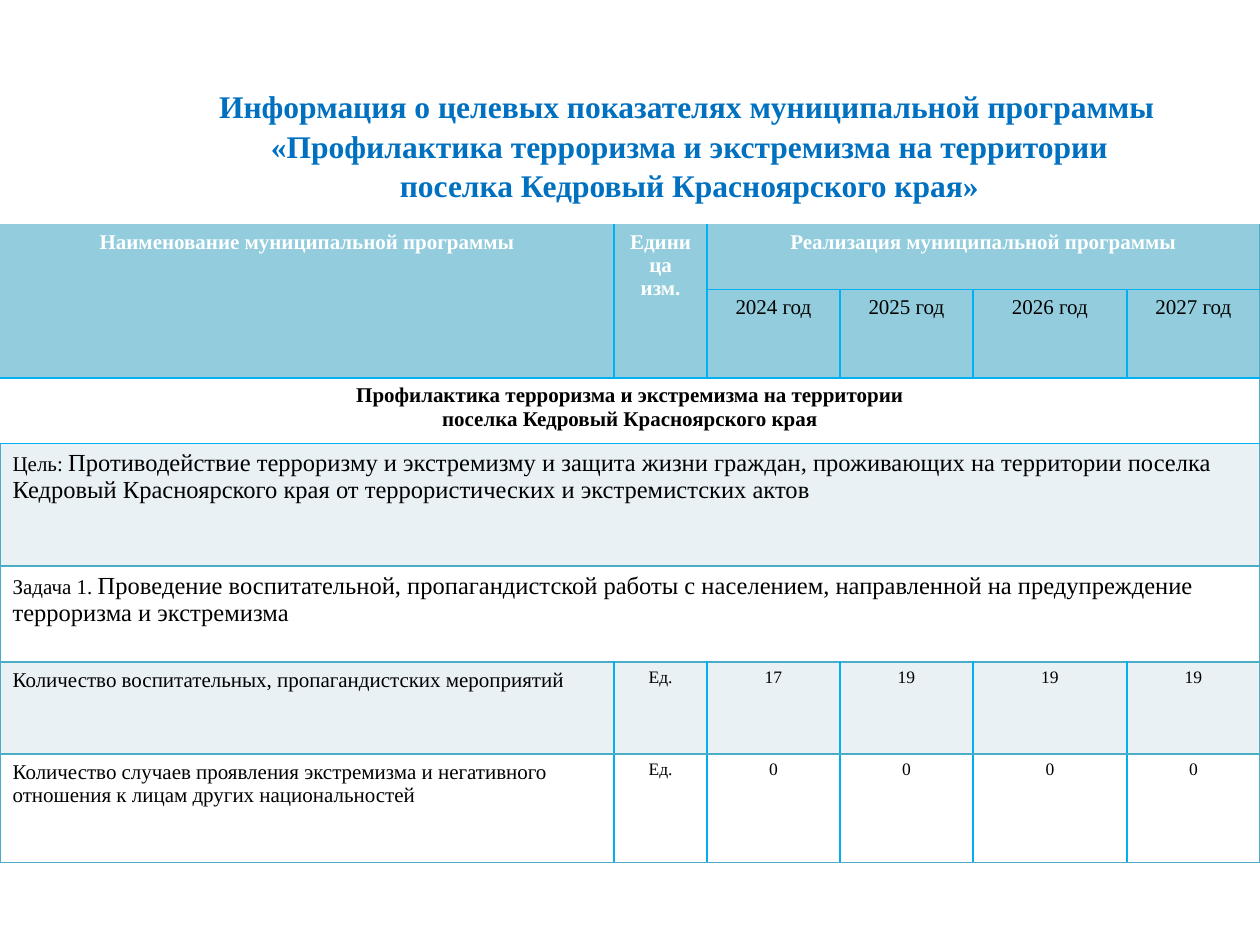
from lxml.etree import SubElement
from pptx import Presentation
from pptx.dml.color import RGBColor
from pptx.enum.text import MSO_ANCHOR as Anchor, MSO_AUTO_SIZE as AutoSize, PP_ALIGN as Align
from pptx.oxml.ns import qn
from pptx.util import Pt

BRIGHT, TEAL, BLUE = "00B0F0", "4BACC6", "0070C0"
HEADER, PALE, WHITE, BLACK = "93CDDD", "E9F1F5", "FFFFFF", "000000"

COLUMN_WIDTHS = [351, 53, 76, 76, 88, 76]
ROW_HEIGHTS = [37.5, 37.5, 37.5, 70, 55, 52.5, 62]
HEADER_ROWS = 3

TITLE = [
    ("Информация о целевых показателях муниципальной программы", Align.LEFT),
    ("«Профилактика терроризма и экстремизма на территории", Align.CENTER),
    ("поселка Кедровый Красноярского края»", Align.CENTER),
]
HEADINGS = [
    ("Наименование муниципальной программы", 0, 2, 1),
    ("Единица изм.", 1, 2, 1),
    ("Реализация муниципальной программы", 2, 1, 4),
]
YEARS = ["2024 год", "2025 год", "2026 год", "2027 год"]
PROGRAM = [
    "Профилактика терроризма и экстремизма на территории",
    "поселка Кедровый Красноярского края",
]
AIMS = [
    ("Цель: ", "Противодействие терроризму и экстремизму и защита жизни граждан, "
     "проживающих на территории поселка Кедровый Красноярского края "
     "от террористических и экстремистских актов", PALE),
    ("Задача 1. ", "Проведение воспитательной, пропагандистской работы с населением, "
     "направленной на предупреждение терроризма и экстремизма", WHITE),
]
INDICATORS = [
    ("Количество воспитательных, пропагандистских мероприятий",
     ["Ед.", "17", "19", "19", "19"], PALE),
    ("Количество случаев проявления экстремизма и негативного отношения "
     "к лицам других национальностей", ["Ед.", "0", "0", "0", "0"], WHITE),
]


def rgb(value):
    return RGBColor.from_string(value)


def add_text(paragraph, text, size=12, color=BLACK, bold=False, align=Align.LEFT):
    paragraph.alignment = align
    run = paragraph.add_run()
    run.text = text
    run.font.name = "Times New Roman"
    run.font.size = Pt(size)
    run.font.bold = bold
    run.font.color.rgb = rgb(color)


def next_paragraph(frame, index):
    return frame.add_paragraph() if index else frame.paragraphs[0]


class SlideBuilder:
    def __init__(self, presentation):
        self.slide = presentation.slides.add_slide(presentation.slide_layouts[5])
        self.table = None

    def title(self, lines, left, top, width, height):
        shape = self.slide.shapes.title
        shape.left, shape.top, shape.width, shape.height = map(Pt, (left, top, width, height))
        frame = shape.text_frame
        frame.word_wrap = True
        frame.auto_size = AutoSize.SHAPE_TO_FIT_TEXT
        frame.vertical_anchor = Anchor.TOP
        for index, (line, align) in enumerate(lines):
            paragraph = next_paragraph(frame, index)
            paragraph.line_spacing = 1.05
            paragraph.space_before = Pt(0)
            add_text(paragraph, line, size=18, color=BLUE, bold=True, align=align)

    def add_table(self, left, top, widths, heights):
        frame = self.slide.shapes.add_table(
            len(heights), len(widths), Pt(left), Pt(top), Pt(sum(widths)), Pt(sum(heights)))
        self.table = frame.table
        for column, width in zip(self.table.columns, widths):
            column.width = Pt(width)
        for row, height in zip(self.table.rows, heights):
            row.height = Pt(height)

    def cell(self, row, column, lines, fill, rows=1, columns=1, **text_format):
        cell = self.table.cell(row, column)
        bottom, right = row + rows, column + columns
        if rows * columns > 1:
            cell.merge(self.table.cell(bottom - 1, right - 1))
        self.borders(cell, row, column, bottom, right)
        cell.fill.solid()
        cell.fill.fore_color.rgb = rgb(fill)
        for index, line in enumerate(lines):
            add_text(next_paragraph(cell.text_frame, index), line, **text_format)
        return cell

    def borders(self, cell, row, column, bottom, right):
        def horizontal(edge):
            return BRIGHT if edge <= HEADER_ROWS else TEAL

        left_color = BRIGHT if column else (None if row < HEADER_ROWS else TEAL)
        right_color = BRIGHT if right < len(self.table.columns) else TEAL
        top_color = horizontal(row) if row else None
        colors = {"a:lnL": left_color, "a:lnR": right_color,
                  "a:lnT": top_color, "a:lnB": horizontal(bottom)}
        properties = cell._tc.get_or_add_tcPr()
        for tag, color in colors.items():
            line = SubElement(properties, qn(tag), w=str(Pt(1)))
            if color:
                fill = SubElement(line, qn("a:solidFill"))
                SubElement(fill, qn("a:srgbClr"), val=color)
            else:
                SubElement(line, qn("a:noFill"))


def main():
    presentation = Presentation()
    presentation.slide_width, presentation.slide_height = Pt(720), Pt(540)
    builder = SlideBuilder(presentation)
    builder.title(TITLE, 118, 45, 552, 73)
    builder.add_table(0, 128, COLUMN_WIDTHS, ROW_HEIGHTS)

    for heading, column, rows, columns in HEADINGS:
        builder.cell(0, column, [heading], HEADER, rows, columns,
                     color=WHITE, bold=True, align=Align.CENTER)
    for column, year in enumerate(YEARS, 2):
        builder.cell(1, column, [year], HEADER, align=Align.CENTER)

    full_width = len(COLUMN_WIDTHS)
    builder.cell(2, 0, PROGRAM, WHITE, columns=full_width, bold=True, align=Align.CENTER)
    for row, (label, aim, fill) in enumerate(AIMS, HEADER_ROWS):
        cell = builder.cell(row, 0, [label], fill, columns=full_width)
        add_text(cell.text_frame.paragraphs[0], aim, size=14)
    for row, (name, values, fill) in enumerate(INDICATORS, HEADER_ROWS + len(AIMS)):
        builder.cell(row, 0, [name], fill)
        for column, value in enumerate(values, 1):
            builder.cell(row, column, [value], fill, size=10, align=Align.CENTER)

    presentation.save("out.pptx")


if __name__ == "__main__":
    main()
